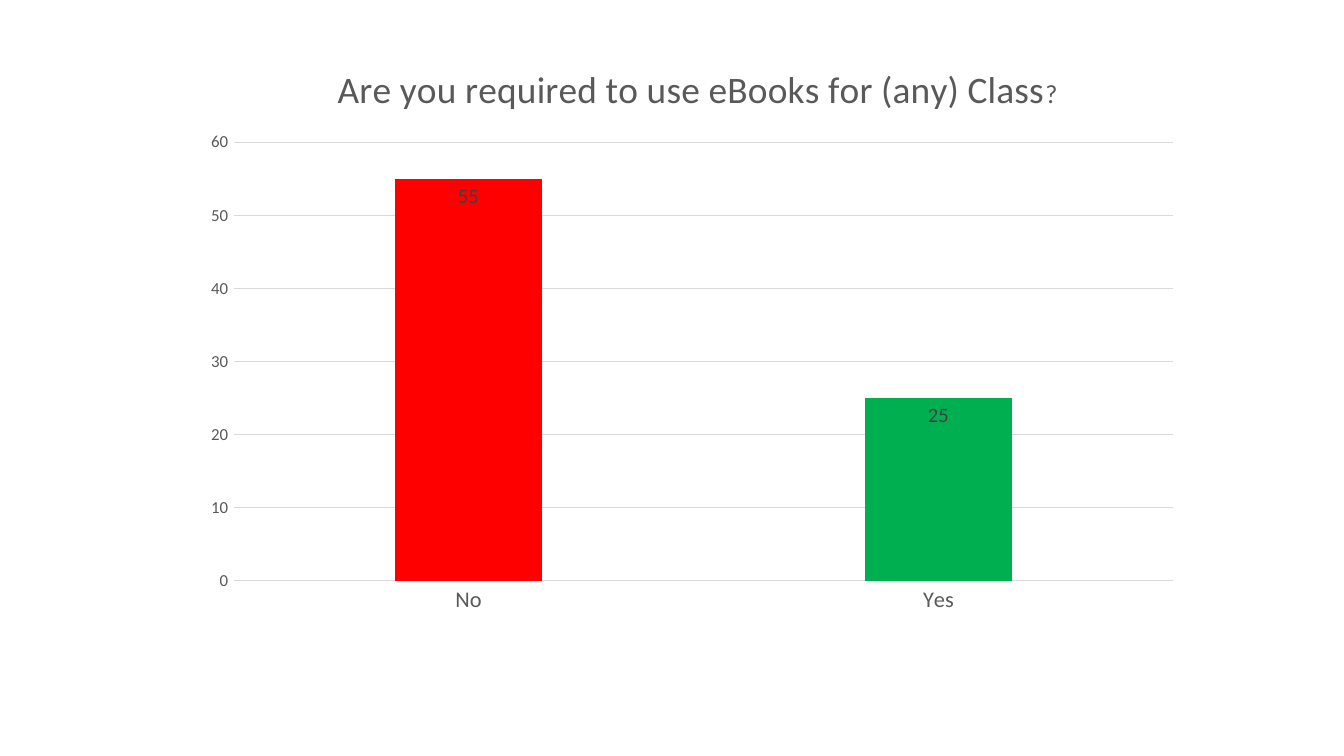
"""Build a slide with a column chart on required eBook use."""
from lxml import etree
from pptx import Presentation
from pptx.chart.data import CategoryChartData
from pptx.dml.color import RGBColor
from pptx.enum.chart import XL_CHART_TYPE, XL_LABEL_POSITION, XL_TICK_MARK
from pptx.oxml.ns import qn
from pptx.util import Inches, Pt

COLUMN_CLUSTERED = XL_CHART_TYPE.COLUMN_CLUSTERED
INSIDE_END = XL_LABEL_POSITION.INSIDE_END
NO_TICK = XL_TICK_MARK.NONE
RED = RGBColor(0xFF, 0x00, 0x00)
GREEN = RGBColor(0x00, 0xB0, 0x50)
GRAY = RGBColor(0x64, 0x64, 0x64)
TEXT_GRAY = RGBColor(0x59, 0x59, 0x59)
LABEL_GRAY = RGBColor(0x40, 0x40, 0x40)
LINE_GRAY = RGBColor(0xD9, 0xD9, 0xD9)
FONT_NAME = "Calibri"


def style_font(font, size, color):
    font.name = FONT_NAME
    font.size = Pt(size)
    font.bold = False
    font.color.rgb = color


def set_layout(element, settings):
    layout = element.find(qn("c:layout"))
    if layout is None:
        layout = etree.Element(qn("c:layout"))
        text = element.find(qn("c:tx"))
        element.insert(0 if text is None else 1, layout)
    for child in list(layout):
        layout.remove(child)
    manual = etree.SubElement(layout, qn("c:manualLayout"))
    for name, value in settings.items():
        etree.SubElement(manual, qn(f"c:{name}")).set("val", str(value))


presentation = Presentation()
presentation.slide_width = Inches(10)
presentation.slide_height = Inches(10) * 9 // 16
slide = presentation.slides.add_slide(presentation.slide_layouts[6])

chart_data = CategoryChartData()
chart_data.categories = ["No", "Yes"]
chart_data.add_series("Series 1", [55, 25])
chart = slide.shapes.add_chart(
    COLUMN_CLUSTERED, Inches(1.44), Inches(0.32), Inches(7.44), Inches(4.35), chart_data
).chart
chart.has_legend = False
chart.font.name = FONT_NAME
chart.font.size = Pt(10)

title = chart.chart_title
title.include_in_layout = False
paragraph = title.text_frame.paragraphs[0]
for text, size in [("Are you required to use eBooks for (any) Class", 20), ("?", 14)]:
    run = paragraph.add_run()
    run.text = text
    style_font(run.font, size, TEXT_GRAY)

category_axis = chart.category_axis
value_axis = chart.value_axis
for axis, size in [(category_axis, 12), (value_axis, 9)]:
    axis.major_tick_mark = NO_TICK
    axis.minor_tick_mark = NO_TICK
    style_font(axis.tick_labels.font, size, TEXT_GRAY)
value_axis.minimum_scale = 0
value_axis.maximum_scale = 60
value_axis.major_unit = 10
value_axis.format.line.fill.background()
for line in [category_axis.format.line, value_axis.major_gridlines.format.line]:
    line.color.rgb = LINE_GRAY
    line.width = Pt(0.75)

plot = chart.plots[0]
plot.gap_width = 219
plot.overlap = -27
plot.vary_by_categories = False
series = plot.series[0]
series.format.fill.solid()
series.format.fill.fore_color.rgb = GRAY
for index, color in enumerate([RED, GREEN]):
    fill = series.points[index].format.fill
    fill.solid()
    fill.fore_color.rgb = color
labels = series.data_labels
labels.show_value = True
labels.position = INSIDE_END
style_font(labels.font, 11, LABEL_GRAY)

chart_element = chart.element.find(qn("c:chart"))
set_layout(
    chart_element.find(qn("c:title")),
    {"xMode": "edge", "yMode": "edge", "x": 0.14, "y": 0.03},
)
set_layout(
    chart_element.find(qn("c:plotArea")),
    {"layoutTarget": "inner", "xMode": "edge", "yMode": "edge",
     "x": 0.04, "y": 0.17, "w": 0.94, "h": 0.75},
)

presentation.save("out.pptx")
